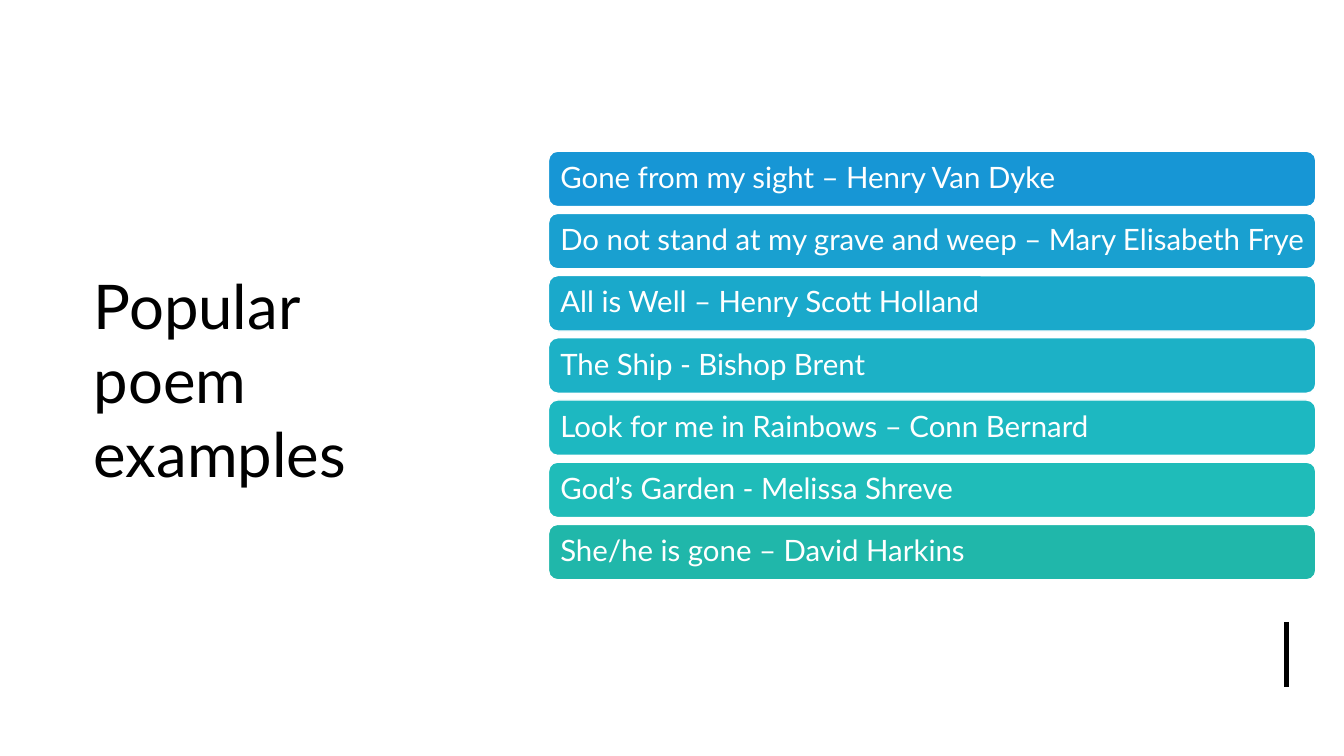
import pptx
import pptx.util
import pptx.dml.color
import pptx.enum.shapes
import pptx.enum.text
import pptx.oxml.ns
import lxml.etree

Inches = pptx.util.Inches
Pt = pptx.util.Pt
RGBColor = pptx.dml.color.RGBColor

BLACK = RGBColor(0x00, 0x00, 0x00)
WHITE = RGBColor(0xFF, 0xFF, 0xFF)
FONT = "Lato"
BAR_TOP = 1.5
BAR_STEP = 0.617

POEMS = [
    ("Gone from my sight – Henry Van Dyke", RGBColor(0x17, 0x96, 0xD5)),
    ("Do not stand at my grave and weep – Mary Elisabeth Frye", RGBColor(0x19, 0xA0, 0xD0)),
    ("All is Well – Henry Scott Holland", RGBColor(0x1A, 0xA9, 0xCB)),
    ("The Ship - Bishop Brent", RGBColor(0x1C, 0xB1, 0xC6)),
    ("Look for me in Rainbows – Conn Bernard", RGBColor(0x1D, 0xB8, 0xC1)),
    ("God’s Garden - Melissa Shreve", RGBColor(0x1F, 0xBC, 0xB9)),
    ("She/he is gone – David Harkins", RGBColor(0x20, 0xB7, 0xAA)),
]


def format_text(box, size, color):
    box.text_frame.word_wrap = True
    box.text_frame.auto_size = pptx.enum.text.MSO_AUTO_SIZE.NONE
    box.text_frame.vertical_anchor = pptx.enum.text.MSO_ANCHOR.MIDDLE
    para = box.text_frame.paragraphs[0]
    para.alignment = pptx.enum.text.PP_ALIGN.LEFT
    para.font.name = FONT
    para.font.size = Pt(size)
    para.font.color.rgb = color
    return para


deck = pptx.Presentation()
deck.slide_width = Inches(13.33)
deck.slide_height = Inches(7.5)
page = deck.slides.add_slide(deck.slide_layouts[5])
page.background.fill.solid()
page.background.fill.fore_color.rgb = WHITE

title = page.shapes.title
title.left, title.top = Inches(0.83), Inches(0.94)
title.width, title.height = Inches(3.77), Inches(5.64)
title.text_frame.text = "Popular poem examples"
format_text(title, 44, BLACK)

accent = page.shapes.add_connector(
    pptx.enum.shapes.MSO_CONNECTOR.STRAIGHT,
    Inches(12.76), Inches(6.17), Inches(12.76), Inches(6.82))
accent.line.color.rgb = BLACK
accent.line.width = Pt(3)
lxml.etree.SubElement(accent._element.spPr, pptx.oxml.ns.qn("a:effectLst"))

for index, (poem, color) in enumerate(POEMS):
    bar = page.shapes.add_shape(
        pptx.enum.shapes.MSO_SHAPE.ROUNDED_RECTANGLE,
        Inches(5.44), Inches(BAR_TOP + index * BAR_STEP), Inches(7.61), Inches(0.55))
    bar.shadow.inherit = False
    bar.fill.solid()
    bar.fill.fore_color.rgb = color
    bar.line.color.rgb = WHITE
    bar.line.width = Pt(1)
    bar.text_frame.text = poem
    bar.text_frame.margin_left = Inches(0.09)
    bar.text_frame.margin_right = Inches(0.04)
    para = format_text(bar, 21, WHITE)
    para.line_spacing = 0.9

deck.save("out.pptx")
